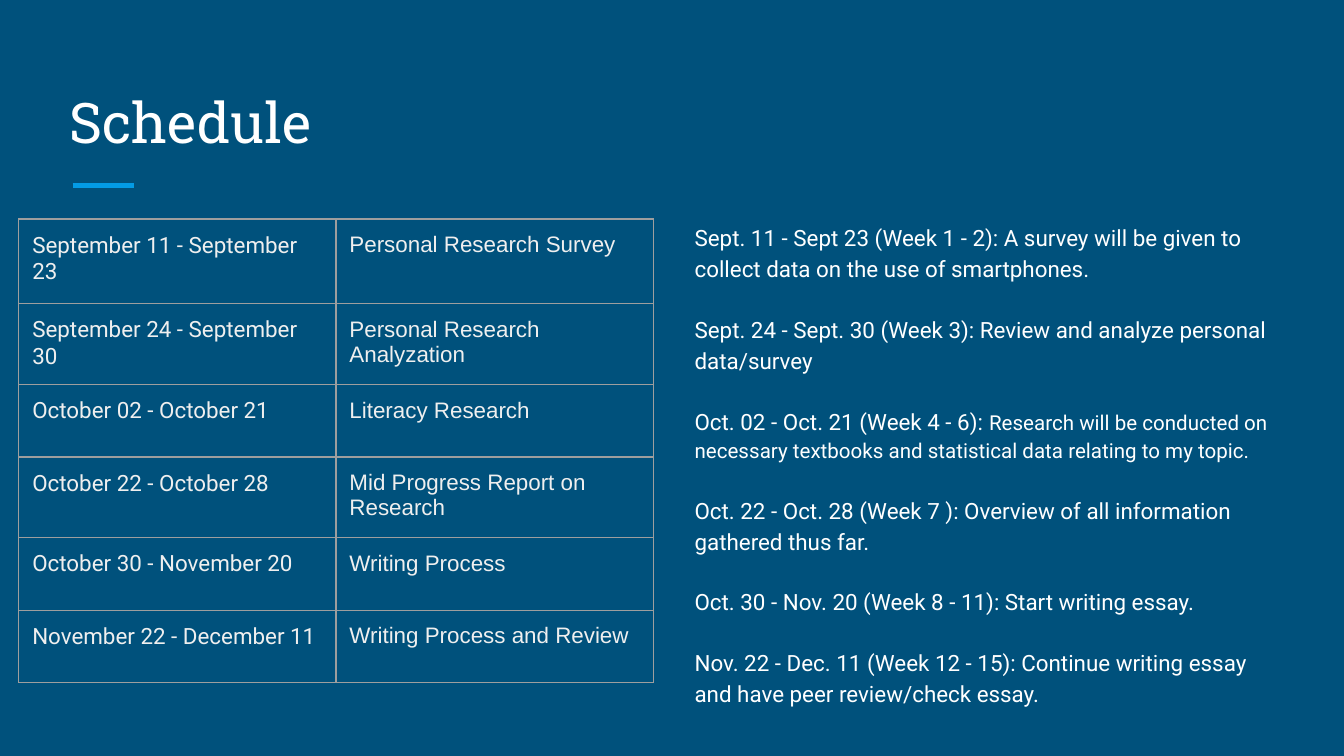
from copy import deepcopy
from typing import NamedTuple

from lxml.etree import SubElement
from pptx import Presentation
from pptx.dml.color import RGBColor
from pptx.enum.shapes import MSO_CONNECTOR as Connector
from pptx.enum.text import MSO_ANCHOR as Anchor
from pptx.oxml import parse_xml
from pptx.oxml.ns import nsdecls, qn
from pptx.util import Inches, Pt

NAVY, BLUE, WHITE, PALE, GREY = "00517C", "039BE5", "FFFFFF", "EFEFEF", "9E9E9E"
MARGIN = Inches(0.1)


class Stage(NamedTuple):
    dates: str
    task: str
    weeks: str
    detail: str
    detail_size: float = 12


STAGES = [
    Stage("September 11 - September 23", "Personal Research Survey",
          "Sept. 11 - Sept 23 (Week 1 - 2): ",
          "A survey will be given to collect data on the use of smartphones."),
    Stage("September 24 - September 30", "Personal Research Analyzation",
          "Sept. 24 - Sept. 30 (Week 3): ",
          "Review and analyze personal data/survey"),
    Stage("October 02 - October 21", "Literacy Research",
          "Oct. 02 - Oct. 21 (Week 4 - 6): ",
          "Research will be conducted on necessary textbooks and "
          "statistical data relating to my topic.", 11),
    Stage("October 22 - October 28", "Mid Progress Report on Research",
          "Oct. 22 - Oct. 28 (Week 7 ): ",
          "Overview of all information gathered thus far."),
    Stage("October 30 - November 20", "Writing Process",
          "Oct. 30 - Nov. 20 (Week 8 - 11): ", "Start writing essay."),
    Stage("November 22 - December 11", "Writing Process and Review",
          "Nov. 22 - Dec. 11 (Week 12 - 15): ",
          "Continue writing essay and have peer review/check essay."),
]


def color(value: str) -> RGBColor:
    return RGBColor.from_string(value)


def add_span(para, text: str, size: float, font: str, tint: str):
    span = para.add_run()
    span.text = text
    span.font.size = Pt(size)
    span.font.name = font
    span.font.color.rgb = color(tint)
    return span


def set_margins(holder) -> None:
    holder.margin_left = holder.margin_right = MARGIN
    holder.margin_top = holder.margin_bottom = MARGIN


def add_frame(page, left: float, top: float, width: float, height: float, anchor):
    box = page.shapes.add_textbox(Inches(left), Inches(top), Inches(width), Inches(height))
    frame = box.text_frame
    frame.word_wrap = True
    frame.vertical_anchor = anchor
    set_margins(frame)
    return frame


def add_accent(page) -> None:
    line = page.shapes.add_connector(
        Connector.STRAIGHT, Inches(0.54), Inches(1.38), Inches(1), Inches(1.38))
    line.line.color.rgb = color(BLUE)
    line.line.width = Pt(3)
    SubElement(line.element.spPr, qn("a:effectLst"))


def fill_cell(cell, text: str, font: str) -> None:
    set_margins(cell)
    cell.fill.background()
    para = cell.text_frame.paragraphs[0]
    span = add_span(para, text, 12, font, PALE)

    # The paragraph end takes the text's format, so it does not stretch the row
    ending = deepcopy(span.font._rPr)
    ending.tag = qn("a:endParaRPr")
    para._p.append(ending)

    properties = cell.fill._xPr
    for index, side in enumerate("LRTB"):
        properties.insert(index, parse_xml(
            f'<a:ln{side} {nsdecls("a")} w="{Pt(0.75)}"><a:solidFill>'
            f'<a:srgbClr val="{GREY}"/></a:solidFill></a:ln{side}>'))


def add_schedule(page) -> None:
    holder = page.shapes.add_table(
        len(STAGES), 2, Inches(0.14), Inches(1.63), Inches(4.72), Inches(3.33))
    table = holder.table
    table.first_row = table.horz_banding = False
    for column in table.columns:
        column.width = Inches(2.36)
    for index, stage in enumerate(STAGES):
        table.rows[index].height = Inches(0.54 if index else 0.63)
        fill_cell(table.cell(index, 0), stage.dates, "Roboto")
        fill_cell(table.cell(index, 1), stage.task, "Arial")
    holder.width = holder.height = Inches(3.28)


def add_details(page) -> None:
    frame = add_frame(page, 5.07, 1.54, 4.57, 3.82, Anchor.TOP)
    for index, stage in enumerate(STAGES):
        para = frame.add_paragraph() if index else frame.paragraphs[0]
        para.line_spacing = 1.15
        para.space_after = Pt(16)
        add_span(para, stage.weeks, 12, "Roboto", WHITE)
        add_span(para, stage.detail, stage.detail_size, "Roboto", WHITE)


def main() -> None:
    deck = Presentation()
    deck.slide_width = Inches(10)
    deck.slide_height = deck.slide_width * 9 // 16
    page = deck.slides.add_slide(deck.slide_layouts[6])
    page.background.fill.solid()
    page.background.fill.fore_color.rgb = color(NAVY)

    # Heading with its accent line
    add_accent(page)
    title = add_frame(page, 0.42, 0.5, 9.15, 0.75, Anchor.BOTTOM)
    add_span(title.paragraphs[0], "Schedule", 30, "Roboto Slab", WHITE)

    # Week-by-week details beside the timetable
    add_details(page)
    add_schedule(page)

    deck.save("out.pptx")


if __name__ == "__main__":
    main()
